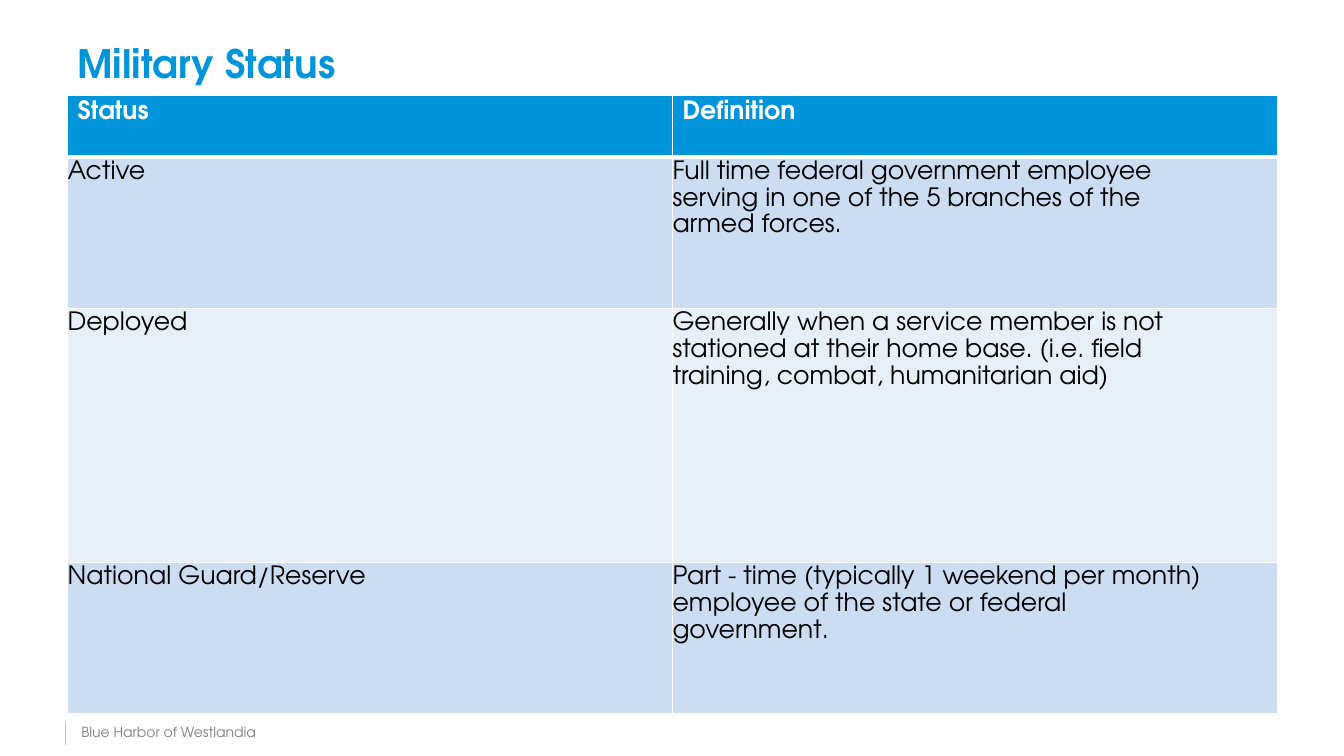
from lxml import etree
from pptx import Presentation
from pptx.dml.color import RGBColor
from pptx.enum.shapes import MSO_CONNECTOR
from pptx.enum.text import MSO_ANCHOR, PP_ALIGN
from pptx.oxml.ns import qn
from pptx.util import Inches, Pt

STRAIGHT = MSO_CONNECTOR.STRAIGHT
LEFT = PP_ALIGN.LEFT
TOP, MIDDLE = MSO_ANCHOR.TOP, MSO_ANCHOR.MIDDLE

FONT = "TeX Gyre Adventor"
BLUE = RGBColor(0x00, 0x95, 0xDA)
BAND_DARK = RGBColor(0xCC, 0xDD, 0xF1)
BAND_LIGHT = RGBColor(0xE7, 0xEF, 0xF8)
WHITE = RGBColor(0xFF, 0xFF, 0xFF)
BLACK = RGBColor(0x00, 0x00, 0x00)
GRAY = RGBColor(0x80, 0x80, 0x80)
RULE_GRAY = RGBColor(0xBE, 0xC0, 0xC2)

# Page grid, in inches: two equal columns between the side margins
PAGE_WIDTH, PAGE_HEIGHT = 13.33, 7.5
MARGIN = 0.67
COLUMN = 6
TITLE_TOP, TABLE_TOP = 0.3, 0.95
ROW_HEIGHTS = [0.61, 1.5, 2.52, 1.5]
FOOTER_TOP = 7.13

STATUSES = [
    ("Status", "Definition"),
    ("Active", "Full time federal government employee serving in one of the "
               "5 branches of the armed forces."),
    ("Deployed", "Generally when a service member is not stationed at their home "
                 "base. (i.e. field training, combat, humanitarian aid)"),
    ("National Guard/Reserve", "Part - time (typically 1 weekend per month) employee "
                               "of the state or federal government."),
]


def write_text(frame, text, size=18, color=BLACK, bold=False, line_spacing=None):
    """Put one formatted, left-aligned paragraph into a text frame."""
    frame.word_wrap = True
    para = frame.paragraphs[0]
    para.alignment = LEFT
    if line_spacing:
        para.line_spacing = line_spacing
    span = para.add_run()
    span.text = text
    span.font.name = FONT
    span.font.size = Pt(size)
    span.font.bold = bold
    span.font.color.rgb = color


def set_borders(cell, **widths):
    """Give a cell white borders; keywords are sides in schema order."""
    properties = cell._tc.get_or_add_tcPr()
    for position, (side, width) in enumerate(widths.items()):
        line = etree.Element(qn(f"a:ln{side}"), w=str(Pt(width)))
        fill = etree.SubElement(line, qn("a:solidFill"))
        etree.SubElement(fill, qn("a:srgbClr"), val=str(WHITE))
        properties.insert(position, line)


def add_title(page, text):
    title = page.shapes.title
    title.left, title.top = Inches(MARGIN), Inches(TITLE_TOP)
    title.width, title.height = Inches(2 * COLUMN), Inches(TABLE_TOP - TITLE_TOP)
    title.text_frame.vertical_anchor = MIDDLE
    write_text(title.text_frame, text, size=28, color=BLUE, bold=True)


def format_cell(cell, text, row):
    cell.vertical_anchor = TOP
    cell.fill.solid()
    if row == 0:
        cell.fill.fore_color.rgb = BLUE
        write_text(cell.text_frame, text, color=WHITE, bold=True)
    else:
        cell.fill.fore_color.rgb = BAND_DARK if row % 2 else BAND_LIGHT
        cell.margin_left = cell.margin_top = cell.margin_bottom = 0
        cell.margin_right = Inches(COLUMN / 10)
        write_text(cell.text_frame, text, line_spacing=1.14)
    set_borders(cell, L=1, R=1, T=3 if row == 1 else 1, B=3 if row == 0 else 1)


def add_status_table(page, rows):
    table = page.shapes.add_table(
        len(rows), 2, Inches(MARGIN), Inches(TABLE_TOP),
        Inches(2 * COLUMN), Inches(sum(ROW_HEIGHTS))).table
    for column in table.columns:
        column.width = Inches(COLUMN)
    for row, (height, texts) in enumerate(zip(ROW_HEIGHTS, rows)):
        table.rows[row].height = Inches(height)
        for column, text in enumerate(texts):
            format_cell(table.cell(row, column), text, row)


def add_footer(page, text):
    # Thin upright rule
    rule = page.shapes.add_connector(
        STRAIGHT, Inches(0.65), Inches(7.16), Inches(0.65), Inches(7.39))
    rule.line.color.rgb = RULE_GRAY
    rule.line.width = Pt(0.5)
    etree.SubElement(rule._element.spPr, qn("a:effectLst"))
    # Organisation name
    box = page.shapes.add_textbox(
        Inches(0.71), Inches(FOOTER_TOP), Inches(2.86), Inches(0.27))
    write_text(box.text_frame, text, size=10, color=GRAY)


def main():
    deck = Presentation()
    deck.slide_width, deck.slide_height = Inches(PAGE_WIDTH), Inches(PAGE_HEIGHT)
    page = deck.slides.add_slide(deck.slide_layouts.get_by_name("Title Only"))
    add_footer(page, "Blue Harbor of Westlandia")
    add_title(page, "Military Status")
    add_status_table(page, STATUSES)
    deck.save("out.pptx")


if __name__ == "__main__":
    main()
